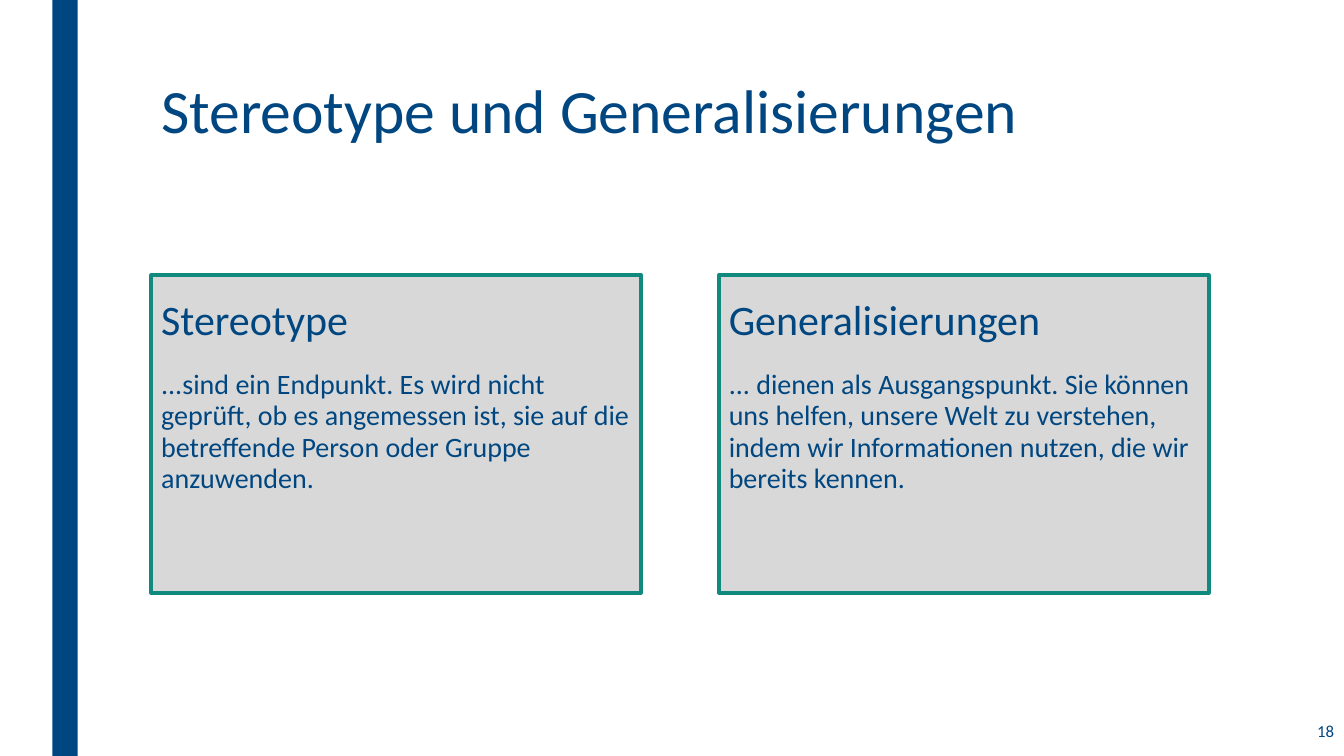
from pptx import Presentation
from pptx.dml.color import RGBColor
from pptx.enum.shapes import MSO_SHAPE
from pptx.enum.text import MSO_ANCHOR, PP_ALIGN
from pptx.util import Inches, Pt

NAVY, GREY, GREEN = "004680", "D8D8D8", "108A7E"
CARD_WIDTH = 4.86
CARDS = [
    (1.5, "Stereotype",
     "...sind ein Endpunkt. Es wird nicht geprüft, ob es angemessen ist, "
     "sie auf die betreffende Person oder Gruppe anzuwenden."),
    (7.13, "Generalisierungen",
     "... dienen als Ausgangspunkt. Sie können uns helfen, unsere Welt zu "
     "verstehen, indem wir Informationen nutzen, die wir bereits kennen."),
]


def color(value):
    return RGBColor.from_string(value)


def add_rectangle(slide, left, top, width, height, fill, line=None):
    shape = slide.shapes.add_shape(
        MSO_SHAPE.RECTANGLE, Inches(left), Inches(top), Inches(width), Inches(height))
    shape.shadow.inherit = False
    shape.fill.solid()
    shape.fill.fore_color.rgb = color(fill)
    if line:
        shape.line.color.rgb = color(line)
        shape.line.width = Pt(2.75)
    else:
        shape.line.fill.background()


def add_text(slide, left, top, width, height, text, size,
             anchor=MSO_ANCHOR.TOP, **paragraph_format):
    box = slide.shapes.add_textbox(
        Inches(left), Inches(top), Inches(width), Inches(height))
    frame = box.text_frame
    frame.word_wrap = True
    frame.vertical_anchor = anchor
    paragraph = frame.paragraphs[0]
    for name, value in paragraph_format.items():
        setattr(paragraph, name, value)
    run = paragraph.add_run()
    run.text = text
    for name, value in {"name": "Calibri", "size": Pt(size)}.items():
        setattr(run.font, name, value)
    run.font.color.rgb = color(NAVY)


def add_card(slide, left, heading, body):
    add_rectangle(slide, left, 2.73, CARD_WIDTH, 3.15, GREY, GREEN)
    add_text(slide, left, 2.56, CARD_WIDTH, 0.9, heading, 30,
             MSO_ANCHOR.BOTTOM, line_spacing=0.84)
    add_text(slide, left, 3.61, CARD_WIDTH, 2.8, body, 20,
             line_spacing=0.94, space_after=Pt(2))


def main():
    presentation = Presentation()
    presentation.slide_width = Inches(13.33)
    presentation.slide_height = Inches(7.5)
    slide = presentation.slides.add_slide(presentation.slide_layouts[6])

    # Side bar and title
    add_rectangle(slide, 0.52, 0, 0.25, 7.5, NAVY)
    add_text(slide, 1.5, 0.75, 10.5, 0.8, "Stereotype und Generalisierungen", 44,
             line_spacing=0.89)

    # Comparison cards
    for left, heading, body in CARDS:
        add_card(slide, left, heading, body)

    # Page number
    add_text(slide, 11.58, 7.03, 1.75, 0.44, "18", 12,
             MSO_ANCHOR.MIDDLE, alignment=PP_ALIGN.RIGHT)

    presentation.save("out.pptx")


if __name__ == "__main__":
    main()
